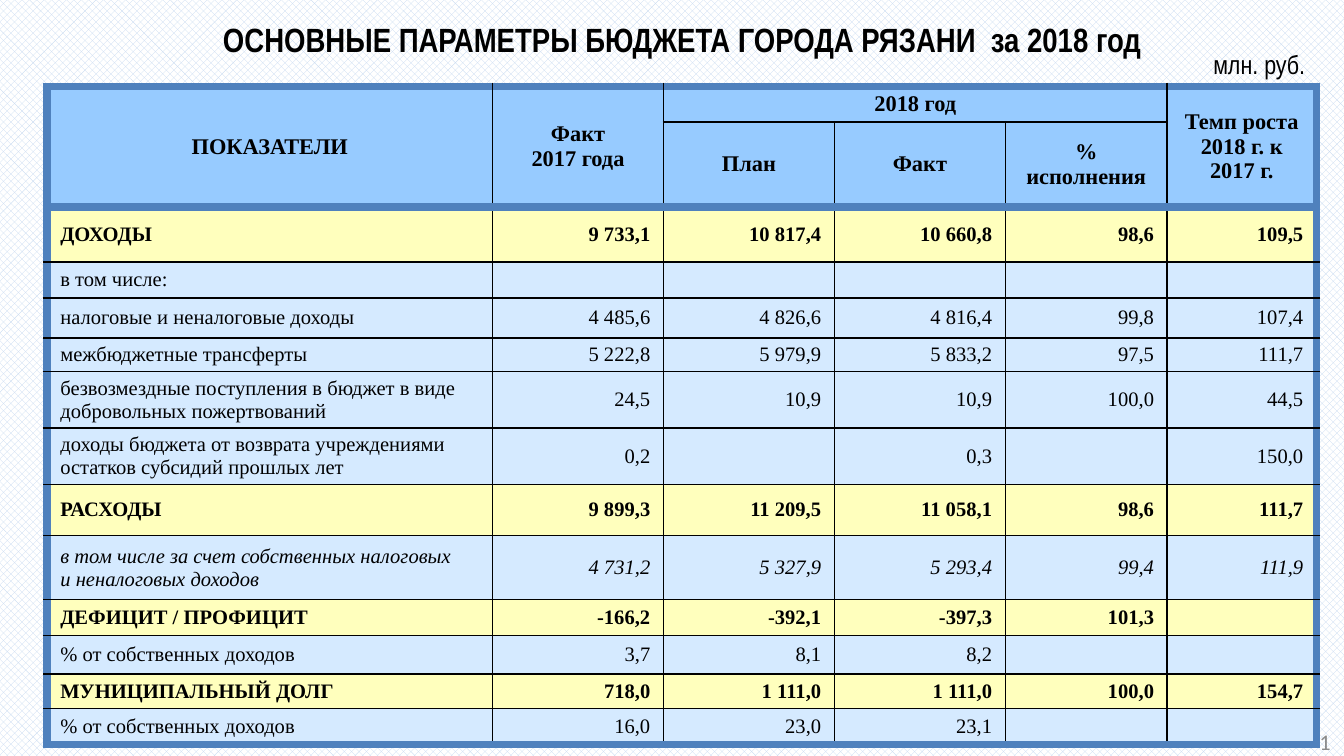
from lxml import etree
from pptx import Presentation
from pptx.dml.color import RGBColor
from pptx.enum.dml import MSO_PATTERN
from pptx.enum.text import MSO_ANCHOR, PP_ALIGN
from pptx.oxml.ns import qn
from pptx.util import Cm, Pt

LEFT, CENTER, RIGHT = PP_ALIGN.LEFT, PP_ALIGN.CENTER, PP_ALIGN.RIGHT
TOP, MIDDLE = MSO_ANCHOR.TOP, MSO_ANCHOR.MIDDLE
CHECKS = MSO_PATTERN.LARGE_CHECKER_BOARD

BLACK = RGBColor(0x00, 0x00, 0x00)
WHITE = RGBColor(0xFF, 0xFF, 0xFF)
GREY = RGBColor(0x8C, 0x8C, 0x8C)
PALE = RGBColor(0xC6, 0xD9, 0xF1)
FRAME = RGBColor(0x4F, 0x81, 0xBD)
HEADER = RGBColor(0x97, 0xCB, 0xFF)
TOTAL = RGBColor(0xFF, 0xFF, 0xBD)
DETAIL = RGBColor(0xD5, 0xEA, 0xFF)

COLUMN_WIDTHS = [8.42, 3.23, 3.23, 3.23, 3.06, 2.82]
# Row height in cm, row style, label and values
ROWS = [
    (0.66, "header", ["ПОКАЗАТЕЛИ", "Факт\n2017 года", "2018 год", "", "", "Темп роста 2018 г. к 2017 г."]),
    (1.6, "header", ["", "", "План", "Факт", "% исполнения", ""]),
    (1.04, "total", ["ДОХОДЫ", "9 733,1", "10 817,4", "10 660,8", "98,6", "109,5"]),
    (0.64, "detail", ["в том числе:", "", "", "", "", ""]),
    (0.76, "detail", ["налоговые и неналоговые доходы", "4 485,6", "4 826,6", "4 816,4", "99,8", "107,4"]),
    (0.62, "detail", ["межбюджетные трансферты", "5 222,8", "5 979,9", "5 833,2", "97,5", "111,7"]),
    (1.06, "detail", ["безвозмездные поступления в бюджет в виде добровольных пожертвований",
                      "24,5", "10,9", "10,9", "100,0", "44,5"]),
    (1.06, "detail", ["доходы бюджета от возврата учреждениями остатков субсидий прошлых лет",
                      "0,2", "", "0,3", "", "150,0"]),
    (0.97, "total", ["РАСХОДЫ", "9 899,3", "11 209,5", "11 058,1", "98,6", "111,7"]),
    (1.21, "italic", ["в том числе за счет собственных налоговых\nи неналоговых доходов",
                      "4 731,2", "5 327,9", "5 293,4", "99,4", "111,9"]),
    (0.62, "total", ["ДЕФИЦИТ / ПРОФИЦИТ", "-166,2", "-392,1", "-397,3", "101,3", ""]),
    (0.72, "detail", ["% от собственных доходов", "3,7", "8,1", "8,2", "", ""]),
    (0.66, "total", ["МУНИЦИПАЛЬНЫЙ ДОЛГ", "718,0", "1 111,0", "1 111,0", "100,0", "154,7"]),
    (0.68, "detail", ["% от собственных доходов", "16,0", "23,0", "23,1", "", ""]),
]
FILLS = {"header": HEADER, "total": TOTAL, "detail": DETAIL, "italic": DETAIL}
HEADER_ROWS = 2


def write_text(frame, text, size, font_name, color=BLACK, align=LEFT, bold=False, italic=False):
    frame.word_wrap = True
    frame.text = text
    for para in frame.paragraphs:
        para.alignment = align
        for span in para.runs:
            font = span.font
            font.size, font.name = Pt(size), font_name
            font.bold, font.italic = bold, italic
            font.color.rgb = color


def add_border(cell, side, thick):
    color, width = (FRAME, Pt(4.5)) if thick else (BLACK, Pt(1))
    line = etree.SubElement(cell._tc.get_or_add_tcPr(), qn(f"a:ln{side}"), w=str(int(width)))
    fill = etree.SubElement(line, qn("a:solidFill"))
    etree.SubElement(fill, qn("a:srgbClr"), val=str(color))


deck = Presentation()
deck.slide_width, deck.slide_height = Cm(25.4), Cm(14.29)
page = deck.slides.add_slide(deck.slide_layouts[5])

backdrop = page.background.fill
backdrop.patterned()
backdrop.pattern = CHECKS
backdrop.fore_color.rgb = PALE
backdrop.back_color.rgb = WHITE

title = page.shapes.title
title.left, title.top, title.width, title.height = Cm(1.3), Cm(0.23), Cm(23.19), Cm(0.89)
title.text_frame.vertical_anchor = TOP
write_text(title.text_frame, "ОСНОВНЫЕ ПАРАМЕТРЫ БЮДЖЕТА ГОРОДА РЯЗАНИ  за 2018 год",
           18, "Arial Narrow", align=CENTER, bold=True)

heights = [height for height, style, texts in ROWS]
table = page.shapes.add_table(len(ROWS), len(COLUMN_WIDTHS), Cm(0.89), Cm(1.63),
                              Cm(sum(COLUMN_WIDTHS)), Cm(sum(heights))).table
table.first_row = table.horz_banding = False
for column, width in zip(table.columns, COLUMN_WIDTHS):
    column.width = Cm(width)
for row, height in zip(table.rows, heights):
    row.height = Cm(height)

for col in (0, 1, 5):
    table.cell(0, col).merge(table.cell(1, col))
table.cell(0, 2).merge(table.cell(0, 4))

for row, (height, style, texts) in enumerate(ROWS):
    for col, text in enumerate(texts):
        cell = table.cell(row, col)
        bottom = row + (cell.span_height if cell.is_merge_origin else 1)
        right = col + (cell.span_width if cell.is_merge_origin else 1)
        thick_edges = {
            "L": col == 0,
            "R": right == len(COLUMN_WIDTHS),
            "T": row in (0, HEADER_ROWS),
            "B": bottom in (HEADER_ROWS, len(ROWS)),
        }
        for side, thick in thick_edges.items():
            if thick or not cell.is_spanned:
                add_border(cell, side, thick)
        cell.fill.solid()
        cell.fill.fore_color.rgb = FILLS[style]
        cell.vertical_anchor = MIDDLE
        cell.margin_left = cell.margin_right = Cm(0.25)
        cell.margin_top = cell.margin_bottom = Cm(0.1)
        if text:
            align = CENTER if style == "header" else RIGHT if col else LEFT
            write_text(cell.text_frame, text, 12 if style == "header" else 11, "Times New Roman",
                       align=align, bold=style in ("header", "total"), italic=style == "italic")
        else:
            # Keeps empty cells from stretching their row
            etree.SubElement(cell.text_frame.paragraphs[0]._p, qn("a:endParaRPr"), sz="1100")
table.cell(0, 2).vertical_anchor = TOP

unit_box = page.shapes.add_textbox(Cm(22.68), Cm(0.79), Cm(2.42), Cm(0.86))
write_text(unit_box.text_frame, "млн. руб.", 14, "Arial Narrow")

number_box = page.shapes.add_textbox(Cm(24.2), Cm(13.74), Cm(1.2), Cm(0.55))
number_box.text_frame.vertical_anchor = MIDDLE
write_text(number_box.text_frame, "1", 12, "Calibri", color=GREY, align=RIGHT)

deck.save("out.pptx")
